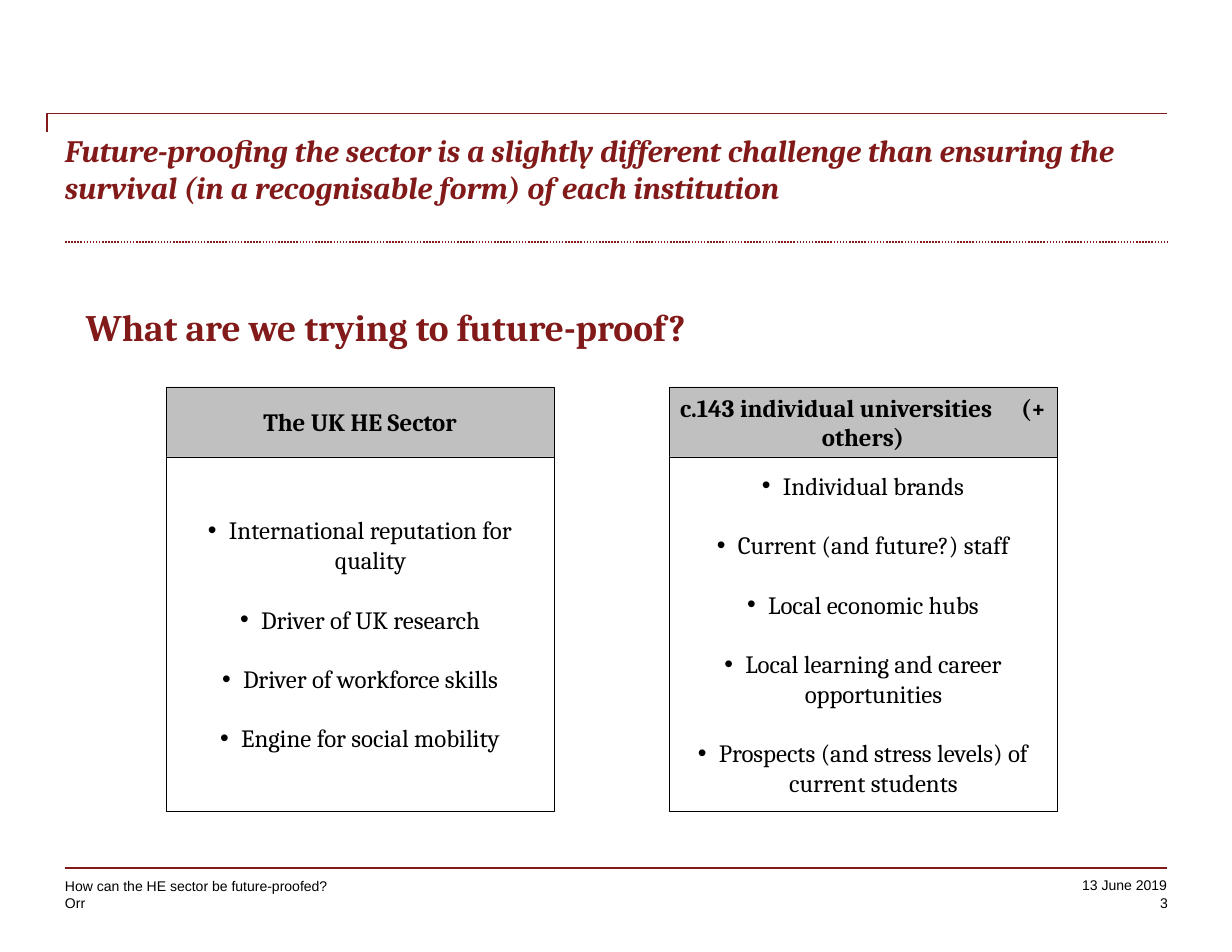
from lxml import etree
from pptx import Presentation
from pptx.dml.color import RGBColor
from pptx.enum.dml import MSO_LINE
from pptx.enum.shapes import MSO_CONNECTOR, MSO_SHAPE
from pptx.enum.text import MSO_ANCHOR, PP_ALIGN
from pptx.oxml.ns import qn
from pptx.util import Emu, Pt

LEFT, CENTER, RIGHT = PP_ALIGN.LEFT, PP_ALIGN.CENTER, PP_ALIGN.RIGHT
TOP, MIDDLE, BOTTOM = MSO_ANCHOR.TOP, MSO_ANCHOR.MIDDLE, MSO_ANCHOR.BOTTOM
STRAIGHT, ELBOW = MSO_CONNECTOR.STRAIGHT, MSO_CONNECTOR.ELBOW
RECTANGLE = MSO_SHAPE.RECTANGLE
DOTTED = MSO_LINE.ROUND_DOT

# Content
TITLE = ("Future-proofing the sector is a slightly different challenge than "
         "ensuring the survival (in a recognisable form) of each institution")
QUESTION = "What are we trying to future-proof?"
# A header given in two pieces has a wide gap between them
COLUMNS = [
    (["The UK HE Sector"],
     ["International reputation for quality",
      "Driver of UK research",
      "Driver of workforce skills",
      "Engine for social mobility"]),
    (["c.143 individual universities", "(+ others)"],
     ["Individual brands",
      "Current (and future?) staff",
      "Local economic hubs",
      "Local learning and career opportunities",
      "Prospects (and stress levels) of current students"]),
]
TALK, FIRM = "How can the HE sector be future-proofed?", "Orr"
DATE, PAGE = "13 June 2019", "3"

COLORS = {"red": "821A1A", "black": "000000", "gray": "C0C0C0", "white": "FFFFFF"}
SERIF, SANS = "Cambria", "Arial"

# Layout in px, 112 to the inch
MARGIN_LEFT, MARGIN_RIGHT = 65, 1167
COLUMN_LEFT, COLUMN_STEP, COLUMN_WIDTH = 166, 503, 388
HEADER_TOP, HEADER_HEIGHT, BODY_HEIGHT = 387, 70, 354
BULLET_INDENT = 21


def px(length):
    return Emu(round(length * 914400 / 112))


def rgb(name):
    return RGBColor.from_string(COLORS[name])


prs = Presentation()
prs.slide_width, prs.slide_height = px(1232), px(952)
slide = prs.slides.add_slide(prs.slide_layouts[6])


def add_bullet(paragraph):
    properties = paragraph._p.get_or_add_pPr()
    properties.set("marL", str(px(BULLET_INDENT)))
    properties.set("indent", str(-px(BULLET_INDENT)))
    etree.SubElement(properties, qn("a:buFont")).set("typeface", "Arial")
    etree.SubElement(properties, qn("a:buChar")).set("char", "•")


def write(frame, paragraphs, size, font=SERIF, color="black", bold=False,
          italic=False, align=LEFT, anchor=TOP, bullets=False, gap=0, spacing=None):
    """Each paragraph is a list of pieces, set apart by a widened space."""
    frame.word_wrap = True
    frame.vertical_anchor = anchor
    for i, pieces in enumerate(paragraphs):
        paragraph = frame.paragraphs[0] if i == 0 else frame.add_paragraph()
        paragraph.alignment = align
        if spacing:
            paragraph.line_spacing = spacing
        if i and gap:
            paragraph.space_before = Pt(gap)
        if bullets:
            add_bullet(paragraph)
        for j, piece in enumerate(pieces):
            for text in ([" "] if j else []) + [piece]:
                run = paragraph.add_run()
                run.text = text
                run.font.size, run.font.name = Pt(size), font
                run.font.bold, run.font.italic = bold, italic
                run.font.color.rgb = rgb(color)
                if text == " ":
                    run._r.get_or_add_rPr().set("spc", "1500")


def add_label(text, left, top, width, height, **style):
    frame = slide.shapes.add_textbox(px(left), px(top), px(width), px(height)).text_frame
    frame.margin_left = frame.margin_right = frame.margin_top = frame.margin_bottom = 0
    write(frame, [[text]], **style)


def add_box(paragraphs, left, top, height, fill, **style):
    box = slide.shapes.add_shape(RECTANGLE, px(left), px(top), px(COLUMN_WIDTH), px(height))
    box.shadow.inherit = False
    box.fill.solid()
    box.fill.fore_color.rgb = rgb(fill)
    box.line.color.rgb = rgb("black")
    box.line.width = Pt(0.5)
    write(box.text_frame, paragraphs, size=16, align=CENTER, anchor=MIDDLE, **style)


def add_rule(kind, x1, y1, x2, y2, width=0.75):
    rule = slide.shapes.add_connector(kind, px(x1), px(y1), px(x2), px(y2))
    rule.line.color.rgb = rgb("red")
    rule.line.width = Pt(width)
    etree.SubElement(rule._element.spPr, qn("a:effectLst"))
    return rule


# Rules
add_rule(STRAIGHT, MARGIN_LEFT, 868, MARGIN_RIGHT, 868)
add_rule(STRAIGHT, MARGIN_LEFT, 242, MARGIN_RIGHT, 242, width=1).line.dash_style = DOTTED
corner_rule = add_rule(ELBOW, 47, 132, MARGIN_RIGHT, 114)
bend = etree.SubElement(corner_rule._element.spPr.find(qn("a:prstGeom")).find(qn("a:avLst")),
                        qn("a:gd"))
bend.set("name", "adj1")
bend.set("fmla", "val 0")

# Title
add_label(TITLE, MARGIN_LEFT, 131, MARGIN_RIGHT - MARGIN_LEFT, 103,
          size=20, color="red", bold=True, italic=True)

# Footer
footer = {"size": 9, "font": SANS}
add_label(TALK, MARGIN_LEFT, 877, 355, 17, anchor=BOTTOM, **footer)
add_label(FIRM, MARGIN_LEFT, 896, 120, 14, spacing=Pt(10), **footer)
add_label(DATE, MARGIN_RIGHT - 160, 877, 160, 17, align=RIGHT, **footer)
add_label(PAGE, MARGIN_RIGHT - 38, 896, 39, 19, align=RIGHT, spacing=Pt(10), **footer)

# Two columns: header above bullet list
for i, (header, points) in enumerate(COLUMNS):
    left = COLUMN_LEFT + i * COLUMN_STEP
    add_box([header], left, HEADER_TOP, HEADER_HEIGHT, "gray", bold=True)
    add_box([[point] for point in points], left, HEADER_TOP + HEADER_HEIGHT,
            BODY_HEIGHT, "white", bullets=True, gap=19)

# Question above the columns
add_label(QUESTION, 86, 282, 974, 80, size=24, color="red", bold=True, spacing=1.5)

prs.save("out.pptx")
